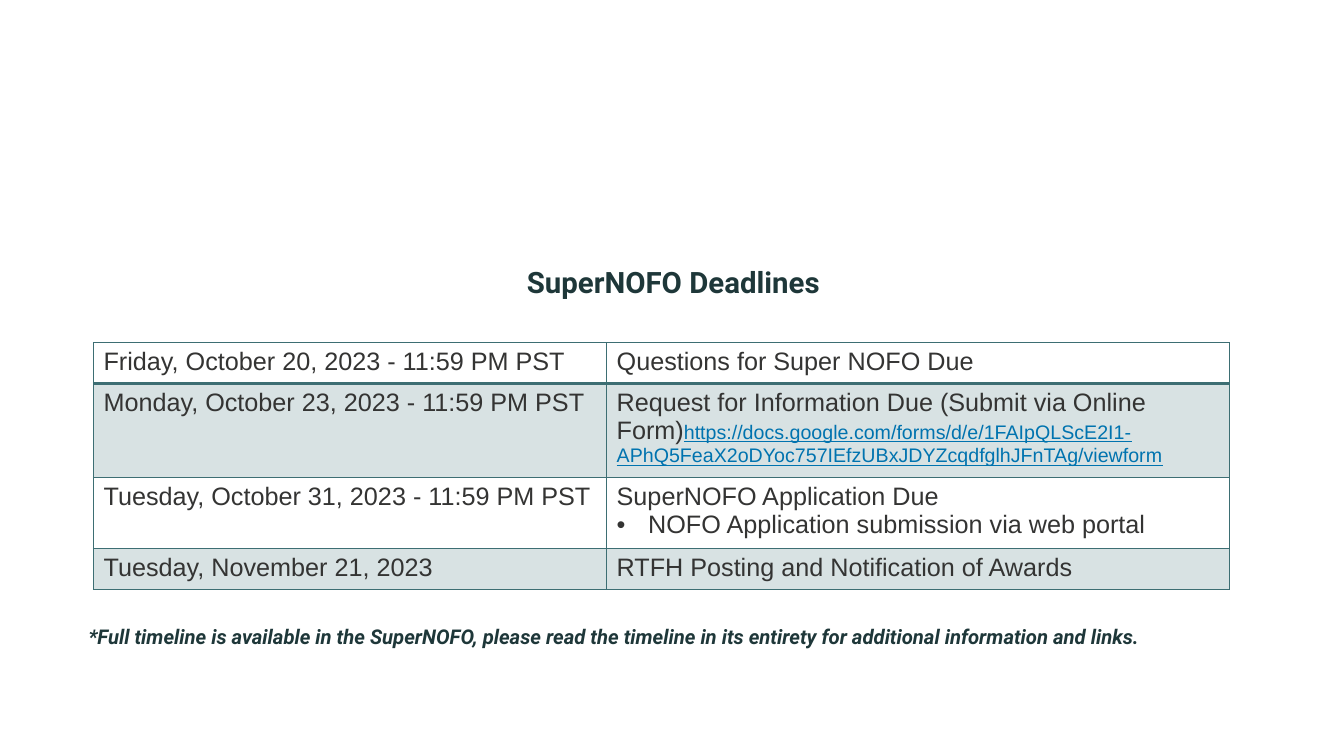
from lxml import etree
from pptx import Presentation
from pptx.dml.color import RGBColor
from pptx.enum.text import PP_ALIGN
from pptx.oxml.ns import qn
from pptx.util import Pt

LEFT, CENTER = PP_ALIGN.LEFT, PP_ALIGN.CENTER
NAVY = RGBColor(0x1E, 0x37, 0x39)
INK = RGBColor(0x34, 0x34, 0x33)
TEAL = RGBColor(0x3D, 0x6E, 0x73)
BAND = RGBColor(0xD8, 0xE2, 0xE3)
WHITE = RGBColor(0xFF, 0xFF, 0xFF)
LINK = RGBColor(0x00, 0x73, 0xAF)

TITLE = "SuperNOFO Deadlines"
FOOTNOTE = ("*Full timeline is available in the SuperNOFO, please read the timeline "
            "in its entirety for additional information and links.")
FORM_URL = ("https://docs.google.com/forms/d/e/1FAIpQLScE2I1-"
            "APhQ5FeaX2oDYoc757IEfzUBxJDYZcqdfglhJFnTAg/viewform")

# date, event, link after the event, bullet below the event, row height
DEADLINES = [
    ("Friday, October 20, 2023 - 11:59 PM PST", "Questions for Super NOFO Due",
     None, None, 29.2),
    ("Monday, October 23, 2023 - 11:59 PM PST",
     "Request for Information Due (Submit via Online Form)", FORM_URL, None, 63.8),
    ("Tuesday, October 31, 2023 - 11:59 PM PST", "SuperNOFO Application Due",
     None, "NOFO Application submission via web portal", 47.2),
    ("Tuesday, November 21, 2023", "RTFH Posting and Notification of Awards",
     None, None, 29.2),
]
COLUMNS = (366.5, 445)
TABLE_LEFT, TABLE_TOP = 66.8, 244.8
BODY_LEFT, BODY_WIDTH = 56.2, 849.6
BULLET_INDENT = 22.5


def add_text(p, text, size=18, font="Arial", color=INK, bold=False, italic=False,
             underline=False):
    r = p.add_run()
    r.text = text
    f = r.font
    f.size, f.name, f.color.rgb = Pt(size), font, color
    f.bold, f.italic, f.underline = bold, italic, underline


def add_heading(slide, text, top, height, align, **fmt):
    box = slide.shapes.add_textbox(Pt(BODY_LEFT), Pt(top), Pt(BODY_WIDTH), Pt(height))
    tf = box.text_frame
    tf.word_wrap = True
    p = tf.paragraphs[0]
    p.alignment, p.line_spacing = align, 0.8
    add_text(p, text, font="Roboto", color=NAVY, bold=True, **fmt)


def set_bullet(p):
    pPr = p._p.get_or_add_pPr()
    pPr.set("marL", str(Pt(BULLET_INDENT)))
    pPr.set("indent", str(-Pt(BULLET_INDENT)))
    etree.SubElement(pPr, qn("a:buFont")).set("typeface", "Arial")
    etree.SubElement(pPr, qn("a:buChar")).set("char", "•")


def set_borders(cell, **widths):
    tcPr = cell._tc.get_or_add_tcPr()
    for side in "LRTB":
        ln = etree.SubElement(tcPr, qn("a:ln" + side), w=str(Pt(widths.get(side, 1))))
        fill = etree.SubElement(ln, qn("a:solidFill"))
        etree.SubElement(fill, qn("a:srgbClr")).set("val", str(TEAL))


def add_deadlines(slide):
    heights = [row[-1] for row in DEADLINES]
    table = slide.shapes.add_table(
        len(DEADLINES), len(COLUMNS), Pt(TABLE_LEFT), Pt(TABLE_TOP),
        Pt(sum(COLUMNS)), Pt(sum(heights))).table
    table.first_row = table.horz_banding = False
    for column, width in zip(table.columns, COLUMNS):
        column.width = Pt(width)
    for i, (date, event, link, bullet, height) in enumerate(DEADLINES):
        table.rows[i].height = Pt(height)
        for j, text in enumerate((date, event)):
            cell = table.cell(i, j)
            set_borders(cell, T=2 if i == 1 else 1, B=2 if i == 0 else 1)
            cell.fill.solid()
            cell.fill.fore_color.rgb = BAND if i % 2 else WHITE
            add_text(cell.text_frame.paragraphs[0], text)
        event_tf = table.cell(i, 1).text_frame
        if link:
            add_text(event_tf.paragraphs[0], link, size=14, color=LINK, underline=True)
        if bullet:
            p = event_tf.add_paragraph()
            set_bullet(p)
            add_text(p, bullet)


def main():
    prs = Presentation()
    prs.slide_width, prs.slide_height = Pt(960), Pt(540)
    slide = prs.slides.add_slide(prs.slide_layouts[6])
    add_heading(slide, TITLE, 190, 28, CENTER, size=21)
    add_deadlines(slide)
    add_heading(slide, FOOTNOTE, 445.5, 22, LEFT, size=14.5, italic=True)
    prs.save("out.pptx")


if __name__ == "__main__":
    main()
